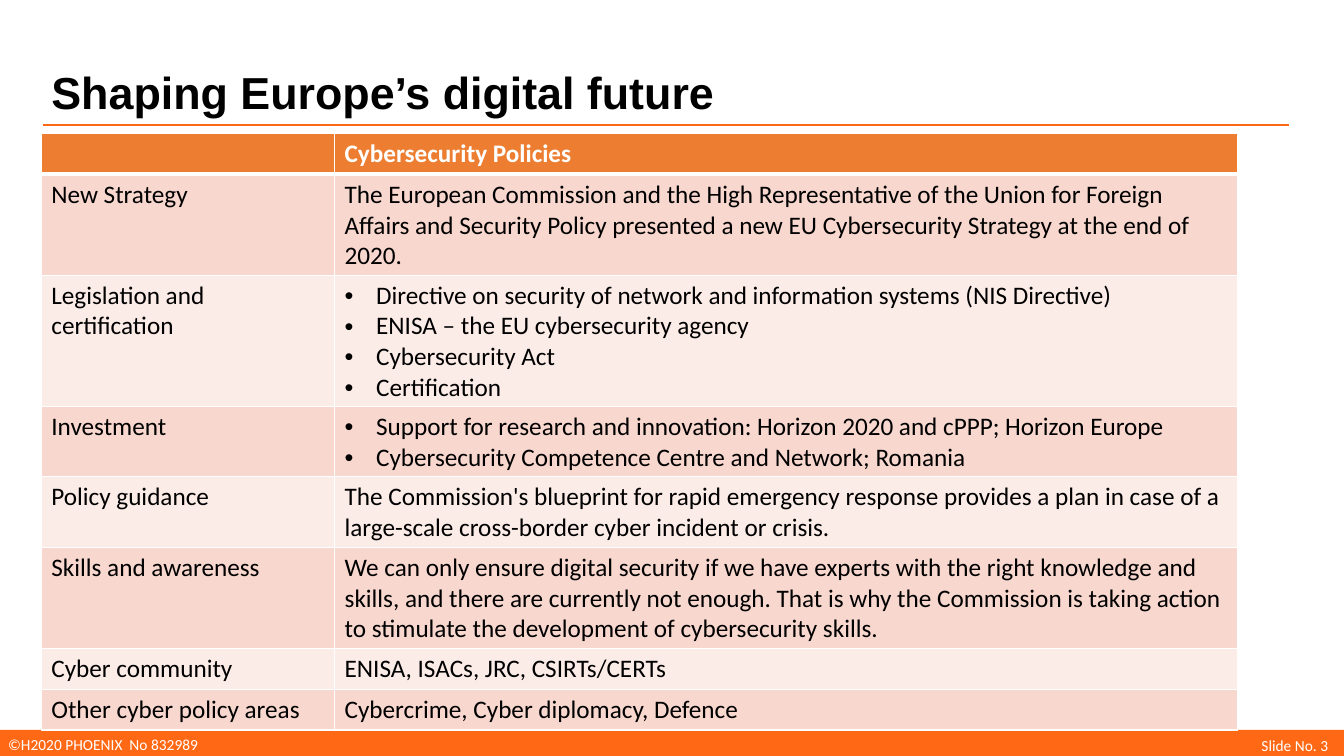
from pptx import Presentation
from pptx.dml.color import RGBColor
from pptx.enum.shapes import MSO_CONNECTOR, MSO_SHAPE
from pptx.enum.text import MSO_ANCHOR, MSO_AUTO_SIZE, PP_ALIGN
from pptx.oxml.ns import qn
from pptx.util import Pt
from lxml.etree import SubElement

COLORS = {
    "accent": "FF6915",
    "head": "ED7D31",
    "odd": "F8D7CE",
    "even": "FCECE8",
    "white": "FFFFFF",
    "black": "000000",
}

# A list in the second column is shown with bullets
POLICIES = [
    ("New Strategy",
     "The European Commission and the High Representative of the Union for "
     "Foreign Affairs and Security Policy presented a new EU Cybersecurity "
     "Strategy at the end of 2020."),
    ("Legislation and certification",
     ["Directive on security of network and information systems (NIS Directive)",
      "ENISA – the EU cybersecurity agency",
      "Cybersecurity Act",
      "Certification"]),
    ("Investment",
     ["Support for research and innovation: Horizon 2020 and cPPP; Horizon Europe",
      "Cybersecurity Competence Centre and Network; Romania"]),
    ("Policy guidance",
     "The Commission's blueprint for rapid emergency response provides a plan "
     "in case of a large-scale cross-border cyber incident or crisis."),
    ("Skills and awareness",
     "We can only ensure digital security if we have experts with the right "
     "knowledge and skills, and there are currently not enough. That is why the "
     "Commission is taking action to stimulate the development of "
     "cybersecurity skills."),
    ("Cyber community", "ENISA, ISACs, JRC, CSIRTs/CERTs"),
    ("Other cyber policy areas", "Cybercrime, Cyber diplomacy, Defence"),
]


class Page:
    font = "Calibri"
    indent = 22.5

    def __init__(self, slide):
        self.slide = slide
        self.shapes = slide.shapes

    def color(self, name):
        return RGBColor.from_string(COLORS[name])

    def run(self, para, text, size, color, bold=False, font=None):
        run = para.add_run()
        run.text = text
        run.font.name = font or self.font
        run.font.size = Pt(size)
        run.font.bold = bold
        run.font.color.rgb = self.color(color)

    def title(self, text, left, top, width, height):
        shape = self.shapes.title
        shape.left, shape.top = Pt(left), Pt(top)
        shape.width, shape.height = Pt(width), Pt(height)
        frame = shape.text_frame
        frame.auto_size = MSO_AUTO_SIZE.NONE
        frame.vertical_anchor = MSO_ANCHOR.BOTTOM
        para = frame.paragraphs[0]
        para.alignment = PP_ALIGN.LEFT
        para.line_spacing = 0.9
        self.run(para, text, 32, "black", True, "Arial")

    def bar(self, left, top, width, height):
        shape = self.shapes.add_shape(
            MSO_SHAPE.RECTANGLE, Pt(left), Pt(top), Pt(width), Pt(height))
        shape.shadow.inherit = False
        shape.fill.solid()
        shape.fill.fore_color.rgb = self.color("accent")
        shape.line.fill.background()

    def rule(self, left, right, top):
        line = self.shapes.add_connector(
            MSO_CONNECTOR.STRAIGHT, Pt(left), Pt(top), Pt(right), Pt(top))
        line.line.color.rgb = self.color("accent")
        line.line.width = Pt(2)
        SubElement(line._element.spPr, qn("a:effectLst"))

    def label(self, text, left, top, align):
        box = self.shapes.add_textbox(Pt(left), Pt(top), Pt(218), Pt(11.5))
        frame = box.text_frame
        frame.word_wrap = False
        frame.vertical_anchor = MSO_ANCHOR.MIDDLE
        frame.margin_left = frame.margin_right = 0
        frame.margin_top = frame.margin_bottom = 0
        para = frame.paragraphs[0]
        para.alignment = align
        self.run(para, text, 11, "white")

    def bullet(self, para):
        props = para._p.get_or_add_pPr()
        props.set("marL", str(Pt(self.indent)))
        props.set("indent", str(-Pt(self.indent)))
        SubElement(props, qn("a:buFont"), typeface="Arial")
        SubElement(props, qn("a:buChar"), char="•")

    def border(self, cell, low):
        props = cell._tc.get_or_add_tcPr()
        for tag, width in (("lnL", 1), ("lnR", 1), ("lnT", 1), ("lnB", low)):
            line = SubElement(props, qn("a:" + tag), w=str(Pt(width)))
            fill = SubElement(line, qn("a:solidFill"))
            SubElement(fill, qn("a:srgbClr"), val=COLORS["white"])

    def cell(self, cell, content, fill, head=False):
        self.border(cell, 3 if head else 1)
        cell.fill.solid()
        cell.fill.fore_color.rgb = self.color(fill)
        listed = isinstance(content, list)
        frame = cell.text_frame
        for i, text in enumerate(content if listed else [content]):
            para = frame.add_paragraph() if i else frame.paragraphs[0]
            if listed:
                self.bullet(para)
            if text:
                self.run(para, text, 18, "white" if head else "black", head)

    def table(self, rows, left, top, widths, height):
        frame = self.shapes.add_table(
            len(rows), len(widths), Pt(left), Pt(top),
            Pt(sum(widths)), Pt(height * len(rows)))
        table = frame.table
        for col, width in zip(table.columns, widths):
            col.width = Pt(width)
        for i, row in enumerate(rows):
            fill = "head" if i == 0 else "odd" if i % 2 else "even"
            for j, content in enumerate(row):
                self.cell(table.cell(i, j), content, fill, i == 0)


def main():
    deck = Presentation()
    deck.slide_width, deck.slide_height = Pt(960), Pt(540)
    page = Page(deck.slides.add_slide(deck.slide_layouts[5]))

    # Footer band
    page.bar(0, 521.3, 960, 18.7)
    page.label("Slide No. 3", 730.8, 527, PP_ALIGN.RIGHT)
    page.label("©H2020 PHOENIX  No 832989", 5.8, 526.3, PP_ALIGN.LEFT)

    # Heading with rule
    page.rule(31, 921, 89.3)
    page.title("Shaping Europe’s digital future", 29.5, 29.5, 828, 59)

    # Policy table
    rows = [("", "Cybersecurity Policies")] + POLICIES
    page.table(rows, 29.5, 95.3, (209.5, 645), 29.2)

    deck.save("out.pptx")


if __name__ == "__main__":
    main()
